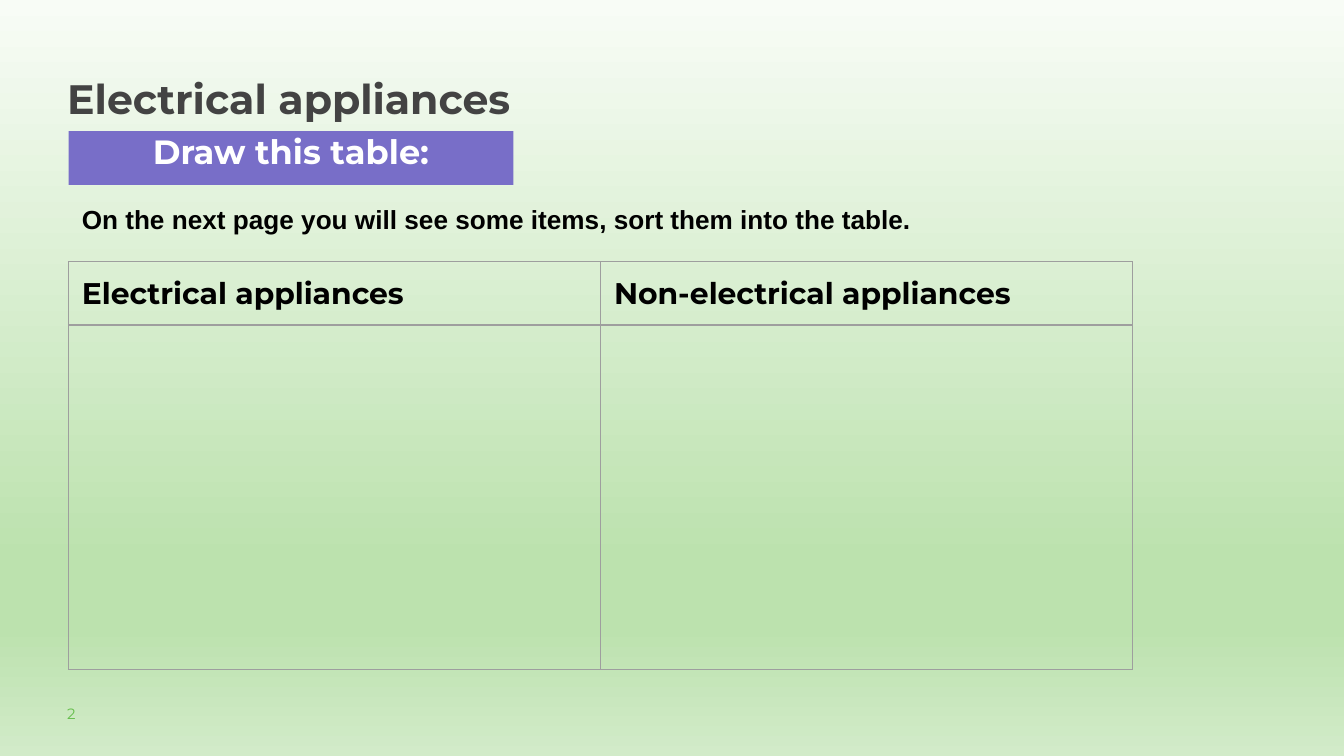
from lxml import etree
from pptx import Presentation
from pptx.dml import color
from pptx.enum import shapes, text
from pptx.oxml import ns
from pptx.util import Pt

COLORS = {"title": "434343", "banner": "786EC8", "white": "FFFFFF",
          "black": "000000", "number": "65BE4B", "border": "9E9E9E"}
GRADIENT = [(0, "F8FCF6"), (74, "BCE2AE"), (83, "BCE2AE"), (100, "D2EBC9")]


def rgb(name):
    """Return the named colour."""
    return color.RGBColor.from_string(COLORS[name])


def sub(parent, tag, **attrs):
    """Append a DrawingML element to its parent."""
    return etree.SubElement(parent, ns.qn(tag), attrs)


def add_run(p, words, size, fill, bold=True, font="Montserrat"):
    """Add one formatted run to a paragraph."""
    r = p.add_run()
    r.text = words
    r.font.name = font
    r.font.size = Pt(size)
    r.font.bold = bold
    r.font.color.rgb = rgb(fill)


def prepare_frame(sp, inset=0):
    """Set up a top-anchored wrapping frame and return its first paragraph."""
    tf = sp.text_frame
    tf.word_wrap = True
    tf.auto_size = text.MSO_AUTO_SIZE.NONE
    tf.vertical_anchor = text.MSO_ANCHOR.TOP
    tf.margin_left = tf.margin_right = Pt(inset)
    tf.margin_top = tf.margin_bottom = Pt(inset / 2)
    return tf.paragraphs[0]


def paint_background(s):
    """Fill the slide with the vertical green gradient."""
    fill = s.background.fill
    fill.gradient()
    fill.gradient_angle = 270
    stops = s.background._cSld.find(".//" + ns.qn("a:gsLst"))
    for stop in list(stops):
        stops.remove(stop)
    for position, shade in GRADIENT:
        stop = sub(stops, "a:gs", pos=str(position * 1000))
        sub(stop, "a:srgbClr", val=shade)


def place_title(s, box, words):
    """Place the slide title in its placeholder."""
    sp = s.shapes.title
    sp.left, sp.top, sp.width, sp.height = map(Pt, box)
    p = prepare_frame(sp)
    p.alignment = text.PP_ALIGN.LEFT
    p.line_spacing = 1.15
    add_run(p, words, 22, "title")


def add_banner(s, box, words):
    """Add the filled task banner."""
    sp = s.shapes.add_shape(shapes.MSO_SHAPE.RECTANGLE, *map(Pt, box))
    sp.shadow.inherit = False
    sp.fill.solid()
    sp.fill.fore_color.rgb = rgb("banner")
    sp.line.fill.background()
    p = prepare_frame(sp)
    p.alignment = text.PP_ALIGN.CENTER
    p.space_after = Pt(20)
    add_run(p, words, 18, "white")


def add_label(s, box, words, inset=0, **style):
    """Add a one-line text box."""
    sp = s.shapes.add_textbox(*map(Pt, box))
    add_run(prepare_frame(sp, inset), words, **style)


def style_cell(cell):
    """Give a cell thin borders, even margins and no fill."""
    for side in ("L", "R", "T", "B"):
        line = sub(cell._tc.get_or_add_tcPr(), f"a:ln{side}", w=str(Pt(0.75)))
        sub(sub(line, "a:solidFill"), "a:srgbClr", val=COLORS["border"])
    cell.fill.background()
    cell.margin_left = cell.margin_right = Pt(7.2)
    cell.margin_top = cell.margin_bottom = Pt(7.2)


def add_sorting_table(s, box, headings, header_height):
    """Add a table with a heading row above one tall empty row."""
    left, top, width, height = box
    table = s.shapes.add_table(2, len(headings), *map(Pt, box)).table
    table.rows[0].height = Pt(header_height)
    table.rows[1].height = Pt(height - header_height)
    for column in table.columns:
        column.width = Pt(width / len(headings))
    for cell in table.iter_cells():
        style_cell(cell)
    for cell, heading in zip(table.rows[0].cells, headings):
        add_run(cell.text_frame.paragraphs[0], heading, 16, "black")


def main():
    """Build and save the slide."""
    prs = Presentation()
    prs.slide_width, prs.slide_height = Pt(720), Pt(405)
    s = prs.slides.add_slide(prs.slide_layouts[5])
    paint_background(s)
    add_label(s, (36, 377.3, 57, 14.4), "2", size=8, fill="number", bold=False)
    add_banner(s, (36.7, 70.3, 238.3, 28.8), "Draw this table:")
    place_title(s, (36, 35.3, 648, 28.8), "Electrical appliances")
    add_sorting_table(s, (36.7, 140.2, 570.2, 218.4),
                      ["Electrical appliances", "Non-electrical appliances"], 33.6)
    add_label(s, (36.7, 105.5, 601.2, 24.5),
              "On the next page you will see some items, sort them into the table.",
              inset=7.2, size=14, fill="black", font="Arial")
    prs.save("out.pptx")


if __name__ == "__main__":
    main()
